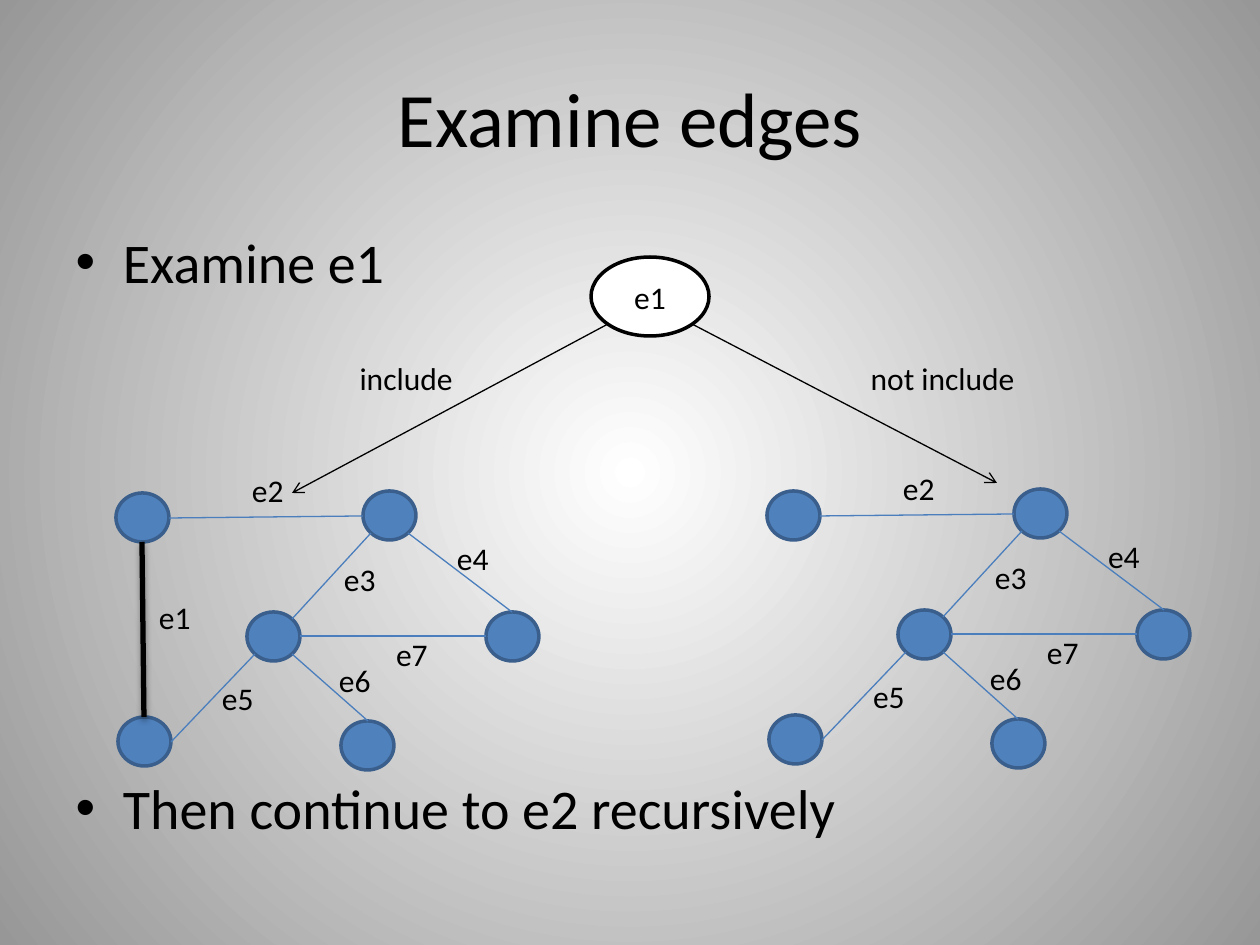
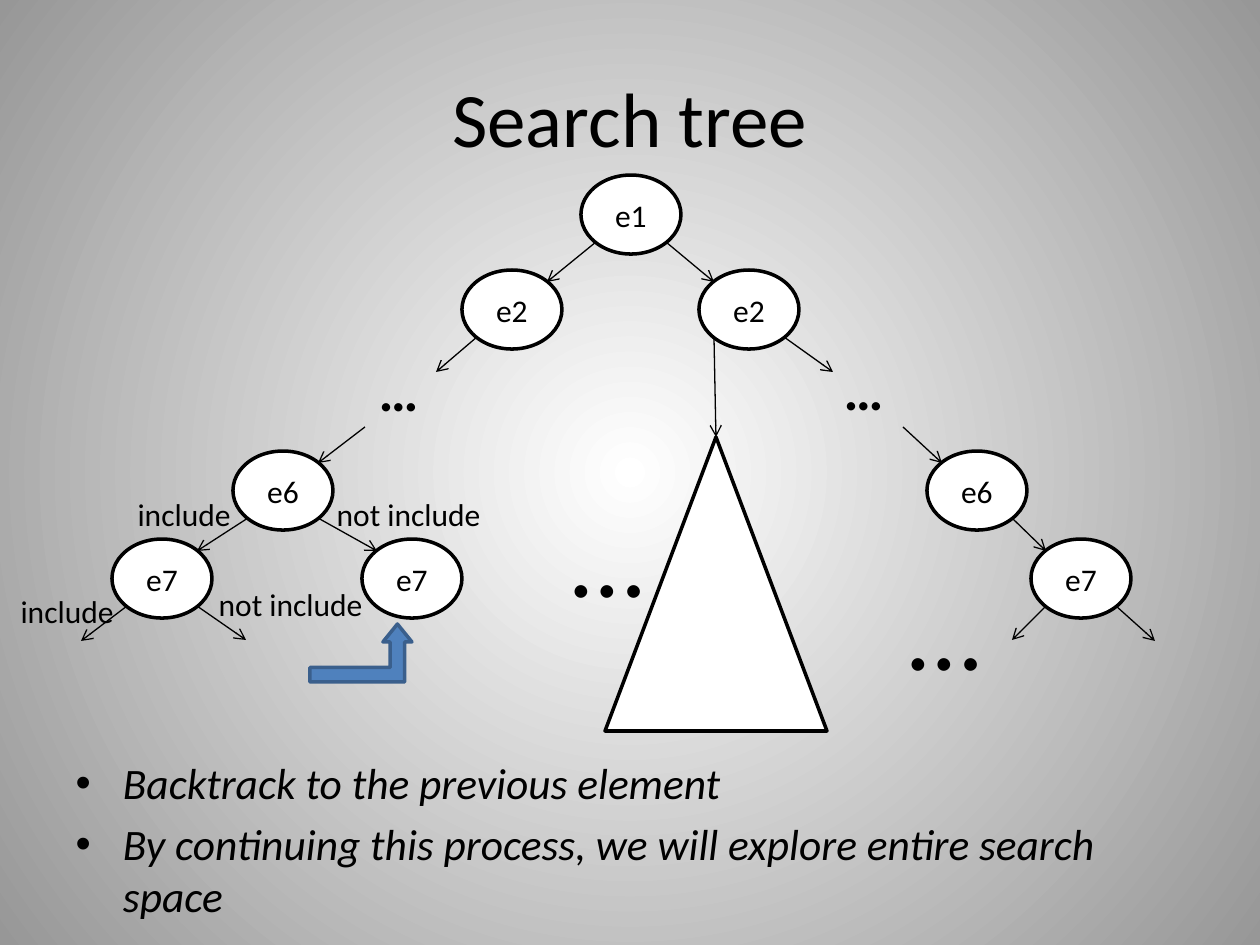
from enum import Enum
from math import sqrt
from typing import NamedTuple, Optional

from lxml.etree import SubElement
from pptx import Presentation
from pptx.dml.color import RGBColor
from pptx.enum.shapes import MSO_CONNECTOR as Connectors, MSO_SHAPE as Shapes
from pptx.enum.text import MSO_ANCHOR as Anchor, MSO_AUTO_SIZE as AutoSize, PP_ALIGN as Align
from pptx.oxml.ns import qn
from pptx.shapes.autoshape import Shape
from pptx.shapes.connector import Connector
from pptx.slide import Slide
from pptx.text.text import TextFrame, _Paragraph as Paragraph
from pptx.util import Emu, Pt

EMU_PER_PX = 914400 / 126
FONT = "Calibri"
COLORS = {
    "ink": "000000",
    "paper": "FFFFFF",
    "background_edge": "979797",
    "node": "4F81BD",
    "node_border": "3A5F8C",
    "edge": "4B7EBC",
}
DIAGONAL = 1 / sqrt(2)


class Side(Enum):
    TOP = (0, -1)
    BOTTOM = (0, 1)
    LEFT = (-1, 0)
    RIGHT = (1, 0)
    TOP_LEFT = (-DIAGONAL, -DIAGONAL)
    TOP_RIGHT = (DIAGONAL, -DIAGONAL)
    BOTTOM_LEFT = (-DIAGONAL, DIAGONAL)
    BOTTOM_RIGHT = (DIAGONAL, DIAGONAL)


class Point(NamedTuple):
    x: int
    y: int


class Box(NamedTuple):
    left: int
    top: int
    width: int
    height: int

    def at(self, side: Side) -> Point:
        across, down = side.value
        return Point(round(self.left + self.width * (1 + across) / 2),
                     round(self.top + self.height * (1 + down) / 2))


class Label(NamedTuple):
    text: str
    left: int
    top: int
    width: int
    height: int = 50
    size: int = 18
    bold: bool = False


class Bullet(NamedTuple):
    text: str
    size: float
    italic: bool = False
    space_before: Optional[float] = None


class Edge(NamedTuple):
    start: str
    start_side: Side
    end: str
    end_side: Side


def px(length: float) -> Emu:
    return Emu(round(length * EMU_PER_PX))


def color(name: str) -> RGBColor:
    return RGBColor.from_string(COLORS[name])


def add_run(paragraph: Paragraph, text: str, size: float,
            bold: bool = False, italic: bool = False) -> None:
    run = paragraph.add_run()
    run.text = text
    font = run.font
    font.name, font.size, font.bold, font.italic = FONT, Pt(size), bold, italic
    font.color.rgb = color("ink")


def place(shape: Shape, box: Box) -> TextFrame:
    shape.left, shape.top, shape.width, shape.height = map(px, box)
    shape.text_frame.auto_size = AutoSize.NONE
    return shape.text_frame


def add_shape(slide: Slide, kind: Shapes, box: Box, fill: str, line: str, text: str = "") -> Shape:
    shape = slide.shapes.add_shape(kind, *map(px, box))
    shape.shadow.inherit = False
    shape.fill.solid()
    shape.fill.fore_color.rgb = color(fill)
    shape.line.color.rgb = color(line)
    shape.line.width = Pt(2)
    if text:
        shape.text_frame.vertical_anchor = Anchor.MIDDLE
        paragraph = shape.text_frame.paragraphs[0]
        paragraph.alignment = Align.CENTER
        add_run(paragraph, text, 18)
    return shape


def add_decision(slide: Slide, box: Box, text: str) -> None:
    add_shape(slide, Shapes.OVAL, box, "paper", "ink", text)


def add_line(slide: Slide, start: Point, end: Point, line: str = "ink", width: float = 0.75,
             arrow: bool = False, shadow: bool = False) -> Connector:
    connector = slide.shapes.add_connector(Connectors.STRAIGHT, *map(px, (*start, *end)))
    connector.line.color.rgb = color(line)
    connector.line.width = Pt(width)
    if arrow:
        SubElement(connector.line._get_or_add_ln(), qn("a:tailEnd"), type="arrow")
    effects = SubElement(connector._element.spPr, qn("a:effectLst"))
    if shadow:
        outer = SubElement(effects, qn("a:outerShdw"), blurRad="40000", dist="23000",
                           dir="5400000", rotWithShape="0")
        shade = SubElement(outer, qn("a:srgbClr"), val=COLORS["ink"])
        SubElement(shade, qn("a:alpha"), val="35000")
    return connector


def add_label(slide: Slide, label: Label) -> None:
    box = (label.left, label.top, label.width, label.height)
    frame = slide.shapes.add_textbox(*map(px, box)).text_frame
    frame.word_wrap = True
    paragraph = frame.paragraphs[0]
    paragraph.alignment = Align.RIGHT
    add_run(paragraph, label.text, label.size, label.bold)


def add_content_slide(presentation: Presentation, title: str, body: Box,
                      bullets: list[Bullet]) -> Slide:
    slide = presentation.slides.add_slide(presentation.slide_layouts[1])
    title_frame = place(slide.shapes.title, Box(63, 38, 1134, 158))
    title_frame.vertical_anchor = Anchor.MIDDLE
    title_frame.paragraphs[0].alignment = Align.CENTER
    add_run(title_frame.paragraphs[0], title, 44)
    body_frame = place(slide.placeholders[1], body)
    for index, bullet in enumerate(bullets):
        paragraph = body_frame.add_paragraph() if index else body_frame.paragraphs[0]
        if bullet.space_before is not None:
            paragraph.space_before = Pt(bullet.space_before)
        add_run(paragraph, bullet.text, bullet.size, italic=bullet.italic)
    return slide


def set_background(presentation: Presentation) -> None:
    master = presentation.slide_master
    fill = master.background.fill
    fill.gradient()
    for stop, position, name in zip(fill.gradient_stops, (0, 1), ("paper", "background_edge")):
        stop.position = position
        stop.color.rgb = color(name)
    gradient = master.element.find(".//" + qn("a:gradFill"))
    gradient.remove(gradient.find(qn("a:lin")))
    circle = SubElement(gradient, qn("a:path"), path="circle")
    SubElement(circle, qn("a:fillToRect"), l="50000", t="50000", r="50000", b="50000")


GRAPH_NODES = {
    "upper left": Point(116, 493),
    "centre": Point(247, 612),
    "lower left": Point(118, 717),
    "lower right": Point(341, 721),
    "upper right": Point(363, 491),
    "far right": Point(486, 612),
}
GRAPH_EDGES = [
    Edge("upper left", Side.RIGHT, "upper right", Side.LEFT),
    Edge("upper right", Side.BOTTOM_LEFT, "centre", Side.TOP_RIGHT),
    Edge("upper right", Side.BOTTOM_RIGHT, "far right", Side.TOP),
    Edge("centre", Side.RIGHT, "far right", Side.LEFT),
    Edge("lower left", Side.RIGHT, "centre", Side.BOTTOM_LEFT),
    Edge("lower right", Side.TOP, "centre", Side.BOTTOM_RIGHT),
]
EDGE_LABELS = [
    Label("e2", 236, 465, 60),
    Label("e5", 197, 673, 69),
    Label("e3", 315, 554, 73),
    Label("e4", 430, 533, 71),
    Label("e6", 307, 655, 76),
    Label("e7", 357, 629, 83),
]


def add_graph(slide: Slide, offset: Point, includes_e1: bool) -> None:
    boxes = {name: Box(node.x + offset.x, node.y + offset.y, 53, 49)
             for name, node in GRAPH_NODES.items()}
    for box in boxes.values():
        add_shape(slide, Shapes.OVAL, box, "node", "node_border")
    for edge in GRAPH_EDGES:
        add_line(slide, boxes[edge.start].at(edge.start_side),
                 boxes[edge.end].at(edge.end_side), "edge")
    if includes_e1:
        add_line(slide, boxes["upper left"].at(Side.BOTTOM), boxes["lower left"].at(Side.TOP),
                 width=3, shadow=True)
        add_label(slide, Label("e1", 135, 592, 68))
    for label in EDGE_LABELS:
        add_label(slide, label._replace(left=label.left + offset.x, top=label.top + offset.y))


def build_examine_edges(presentation: Presentation) -> None:
    slide = add_content_slide(presentation, "Examine edges", Box(63, 221, 1134, 659), [
        Bullet("Examine e1", 32),
        Bullet("Then continue to e2 recursively", 32, space_before=273.5),
    ])
    root = Box(591, 257, 118, 79)
    add_decision(slide, root, "e1")
    add_line(slide, root.at(Side.BOTTOM_LEFT), Point(292, 493), arrow=True)
    add_line(slide, root.at(Side.BOTTOM_RIGHT), Point(997, 483), arrow=True)
    add_label(slide, Label("include", 333, 353, 132))
    add_label(slide, Label("not include", 844, 353, 183))
    add_graph(slide, Point(0, 0), includes_e1=True)
    add_graph(slide, Point(651, -2), includes_e1=False)


TREE_NODES = {
    "e1": Point(581, 175),
    "e2 left": Point(462, 270),
    "e2 right": Point(699, 270),
    "e6 left": Point(233, 451),
    "e6 right": Point(927, 451),
    "e7 included": Point(112, 539),
    "e7 excluded": Point(362, 539),
    "e7 right": Point(1031, 539),
}
TREE_EDGES = [
    Edge("e1", Side.BOTTOM_LEFT, "e2 left", Side.TOP_RIGHT),
    Edge("e1", Side.BOTTOM_RIGHT, "e2 right", Side.TOP_LEFT),
    Edge("e6 left", Side.BOTTOM_LEFT, "e7 included", Side.TOP_RIGHT),
    Edge("e6 left", Side.BOTTOM_RIGHT, "e7 excluded", Side.TOP_LEFT),
    Edge("e6 right", Side.BOTTOM_RIGHT, "e7 right", Side.TOP_LEFT),
]
OUTGOING = [
    ("e2 left", Side.BOTTOM_LEFT, Point(436, 372)),
    ("e2 right", Side.BOTTOM_RIGHT, Point(833, 372)),
    ("e7 included", Side.BOTTOM_LEFT, Point(81, 641)),
    ("e7 included", Side.BOTTOM_RIGHT, Point(246, 640)),
    ("e7 right", Side.BOTTOM_LEFT, Point(1012, 640)),
    ("e7 right", Side.BOTTOM_RIGHT, Point(1155, 641)),
]
INCOMING = [
    (Point(365, 427), "e6 left", Side.TOP_RIGHT),
    (Point(903, 427), "e6 right", Side.TOP_LEFT),
]
TREE_LABELS = [
    Label("include", 111, 489, 132),
    Label("not include", 310, 489, 183),
    Label("include", -6, 586, 132),
    Label("not include", 192, 579, 183),
    Label("…", 559, 486, 92, 140, 60),
    Label("…", 896, 559, 92, 140, 60),
    Label("…", 365, 349, 66, 81, 32, True),
    Label("…", 830, 348, 66, 81, 32, True),
]


def build_search_tree(presentation: Presentation) -> None:
    slide = add_content_slide(presentation, "Search tree", Box(63, 750, 1134, 159), [
        Bullet("Backtrack to the previous element", 24.8, italic=True),
        Bullet("By continuing this process, we will explore entire search space", 24.8, italic=True),
    ])
    boxes = {name: Box(*node, 100, 79) for name, node in TREE_NODES.items()}
    for name, box in boxes.items():
        add_decision(slide, box, name.split()[0])
    for edge in TREE_EDGES:
        add_line(slide, boxes[edge.start].at(edge.start_side),
                 boxes[edge.end].at(edge.end_side), arrow=True)
    for name, side, end in OUTGOING:
        add_line(slide, boxes[name].at(side), end, arrow=True)
    for start, name, side in INCOMING:
        add_line(slide, start, boxes[name].at(side), arrow=True)
    subtree_box = Box(605, 437, 222, 294)
    subtree = add_shape(slide, Shapes.ISOSCELES_TRIANGLE, subtree_box, "paper", "ink")
    branch = add_line(slide, boxes["e2 right"].at(Side.BOTTOM_LEFT),
                      subtree_box.at(Side.TOP), arrow=True)
    branch.end_connect(subtree, 0)
    backtrack = add_shape(slide, Shapes.BENT_UP_ARROW, Box(310, 624, 102, 58),
                          "node", "node_border")
    for index, value in enumerate((0.25, 0.25, 0.31)):
        backtrack.adjustments[index] = value
    for label in TREE_LABELS:
        add_label(slide, label)


def main() -> None:
    presentation = Presentation()
    presentation.slide_width, presentation.slide_height = px(1260), px(945)
    set_background(presentation)
    build_examine_edges(presentation)
    build_search_tree(presentation)
    presentation.save("out.pptx")


if __name__ == "__main__":
    main()
